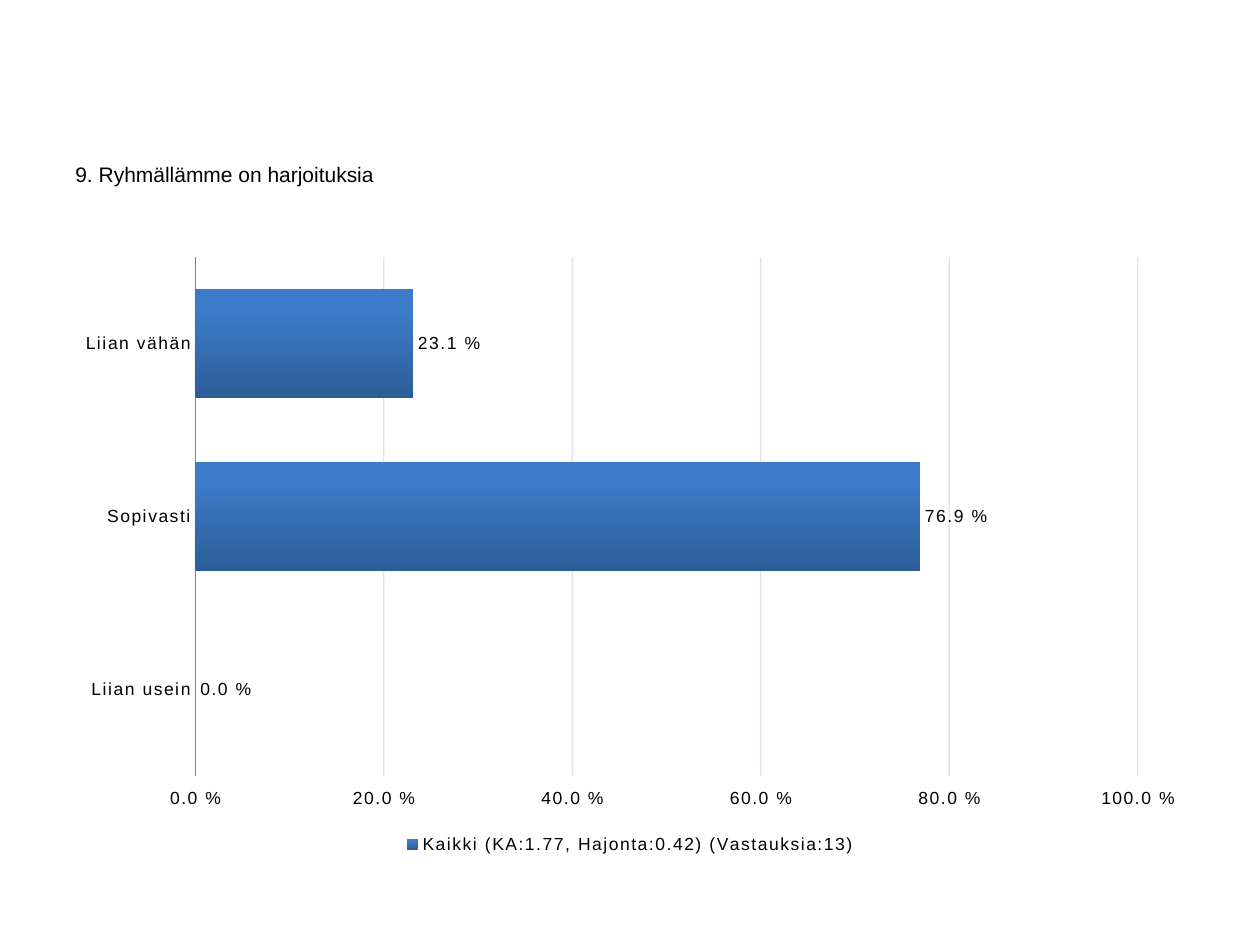
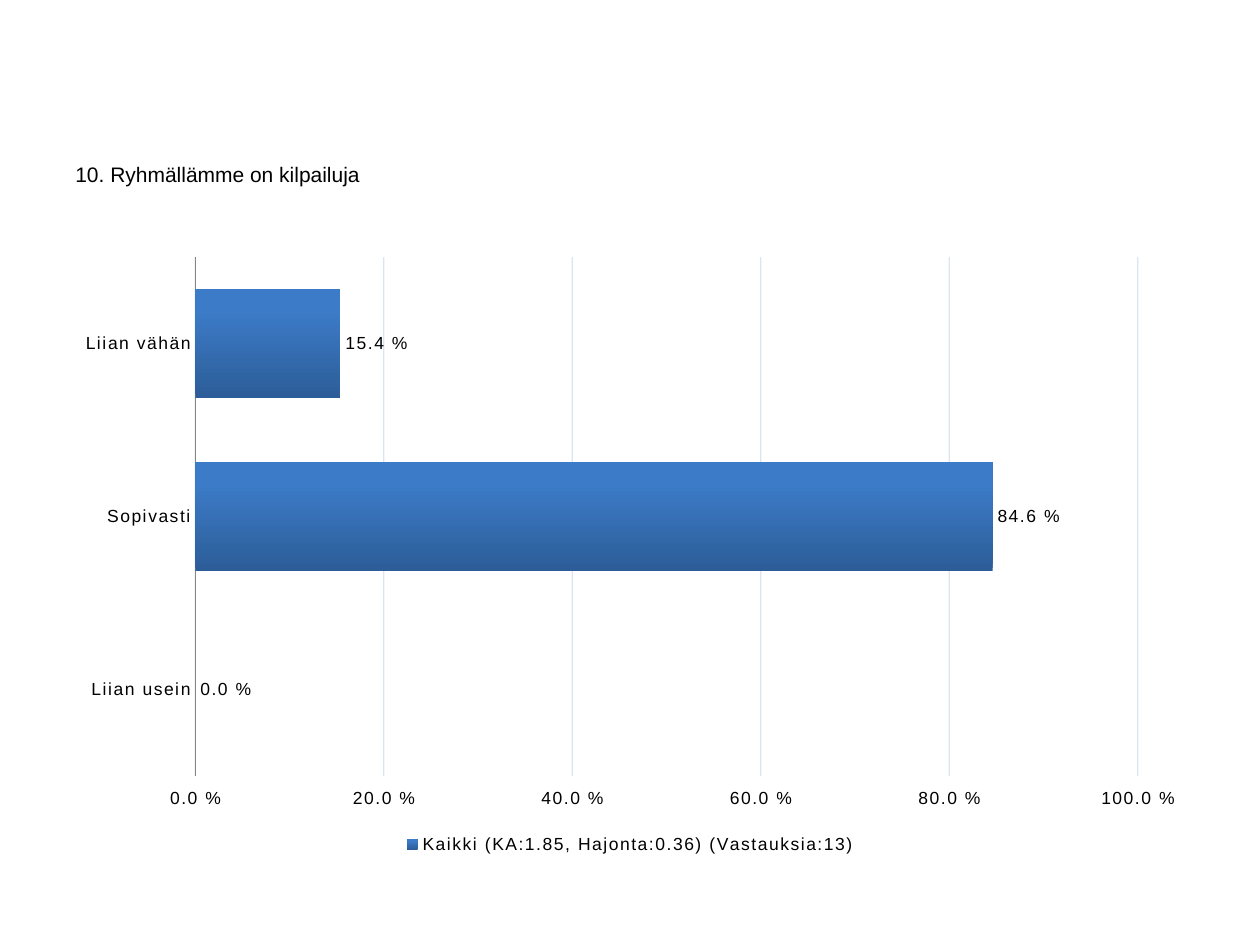
from pptx import Presentation
from pptx import util as u
from pptx.chart import data as chart_data
from pptx.dml.color import RGBColor
from pptx.enum import chart as charts
from pptx.oxml import parse_xml
from pptx.oxml.ns import nsdecls, qn

BLACK = RGBColor(0x00, 0x00, 0x00)
GRID_BLUE = RGBColor(0x4F, 0x81, 0xBD)
BAR_DARK = RGBColor(0x2C, 0x5D, 0x98)
BAR_LIGHT = RGBColor(0x3C, 0x7B, 0xC7)
AXIS_GREY = RGBColor(0x86, 0x86, 0x86)

PERCENT = r"0.0\ %"
ANSWERS = ("Liian vähän", "Sopivasti", "Liian usein")
QUESTIONS = (
    ("9. Ryhmällämme on harjoituksia",
     "Kaikki (KA:1.77, Hajonta:0.42) (Vastauksia:13)",
     (0.231, 0.769, 0)),
    ("10. Ryhmällämme on kilpailuja",
     "Kaikki (KA:1.85, Hajonta:0.36) (Vastauksia:13)",
     (0.154, 0.846, 0)),
)


class SurveyDeck:
    font_name = "Arial"
    left, width = u.Inches(0.5), u.Inches(9)
    chart_height = u.Inches(4.88)
    plot_left, plot_top = u.Inches(1.05), u.Inches(0.1)
    plot_width, plot_height = u.Inches(7.48), u.Inches(4.12)

    def __init__(self):
        self.deck = Presentation()
        self.deck.slide_width = u.Inches(10)
        self.deck.slide_height = u.Inches(7.5)
        self.slide = None

    def add_slide(self):
        self.slide = self.deck.slides.add_slide(self.deck.slide_layouts[6])

    def style(self, font, size):
        font.name = self.font_name
        font.size = u.Pt(size)
        font.color.rgb = BLACK

    def question(self, wording):
        frame = self.slide.shapes.add_textbox(
            self.left, u.Inches(1.23), self.width, u.Inches(0.59)).text_frame
        frame.word_wrap = True
        heading = frame.paragraphs[0]
        heading.text = wording
        heading.space_before = u.Pt(2.4)
        self.style(heading.font, 12)

    def answer_chart(self, group, shares):
        answers = chart_data.CategoryChartData(number_format=PERCENT)
        answers.categories = ANSWERS
        answers.add_series(group, shares)
        chart = self.slide.shapes.add_chart(
            charts.XL_CHART_TYPE.BAR_CLUSTERED, self.left, u.Inches(1.94),
            self.width, self.chart_height, answers).chart
        chart.has_title = False
        self.style(chart.font, 10)
        self.legend(chart)
        self.answer_axis(chart.category_axis)
        self.share_axis(chart.value_axis)
        self.bars(chart.plots[0])
        self.place_plot(chart)
        for run_style in chart.element.iter(qn("a:defRPr")):
            run_style.set("spc", "100")

    def legend(self, chart):
        chart.has_legend = True
        chart.legend.position = charts.XL_LEGEND_POSITION.BOTTOM
        chart.legend.include_in_layout = False
        self.style(chart.legend.font, 10)

    def axis(self, axis):
        axis.major_tick_mark = charts.XL_TICK_MARK.NONE
        axis.minor_tick_mark = charts.XL_TICK_MARK.NONE
        self.style(axis.tick_labels.font, 10)

    def answer_axis(self, axis):
        self.axis(axis)
        axis.reverse_order = True
        axis.format.line.color.rgb = AXIS_GREY
        axis.format.line.width = u.Pt(0.75)

    def share_axis(self, axis):
        self.axis(axis)
        axis.minimum_scale, axis.maximum_scale = 0, 1
        axis.major_unit = 0.2
        axis.tick_label_position = charts.XL_TICK_LABEL_POSITION.HIGH
        axis.tick_labels.number_format = PERCENT
        axis.tick_labels.number_format_is_linked = False
        axis.format.line.fill.background()
        axis.has_major_gridlines = True
        grid = axis.major_gridlines
        grid.format.line.width = u.Pt(0.75)
        grid.format.line.color.rgb = GRID_BLUE
        for colour in axis._element.find(qn("c:majorGridlines")).iter(qn("a:srgbClr")):
            colour.append(parse_xml(f'<a:alpha {nsdecls("a")} val="20000"/>'))

    def bars(self, plot):
        plot.gap_width = 58
        plot.vary_by_categories = False
        series = plot.series[0]
        series.invert_if_negative = False
        series.format.line.fill.background()
        fill = series.format.fill
        fill.gradient()
        fill.gradient_angle = 90
        for stop, position, colour in zip(
                fill.gradient_stops, (0, 0.8), (BAR_DARK, BAR_LIGHT)):
            stop.position = position
            stop.color.rgb = colour
        labels = series.data_labels
        labels.show_value = True
        labels.number_format = PERCENT
        labels.number_format_is_linked = False
        labels.position = charts.XL_LABEL_POSITION.OUTSIDE_END
        self.style(labels.font, 10)

    def place_plot(self, chart):
        plot_area = chart.element.find(".//" + qn("c:plotArea"))
        for layout in plot_area.findall(qn("c:layout")):
            plot_area.remove(layout)
        parts = {"x": self.plot_left / self.width,
                 "y": self.plot_top / self.chart_height,
                 "w": self.plot_width / self.width,
                 "h": self.plot_height / self.chart_height}
        modes = "".join(f'<c:{side}Mode val="edge"/>' for side in "xy")
        sizes = "".join(f'<c:{side} val="{part:.4f}"/>' for side, part in parts.items())
        plot_area.insert(0, parse_xml(
            f'<c:layout {nsdecls("c")}><c:manualLayout>'
            f'<c:layoutTarget val="inner"/>{modes}{sizes}'
            '</c:manualLayout></c:layout>'))


def main():
    survey = SurveyDeck()
    for wording, group, shares in QUESTIONS:
        survey.add_slide()
        survey.question(wording)
        survey.answer_chart(group, shares)
    survey.deck.save("out.pptx")


if __name__ == "__main__":
    main()
